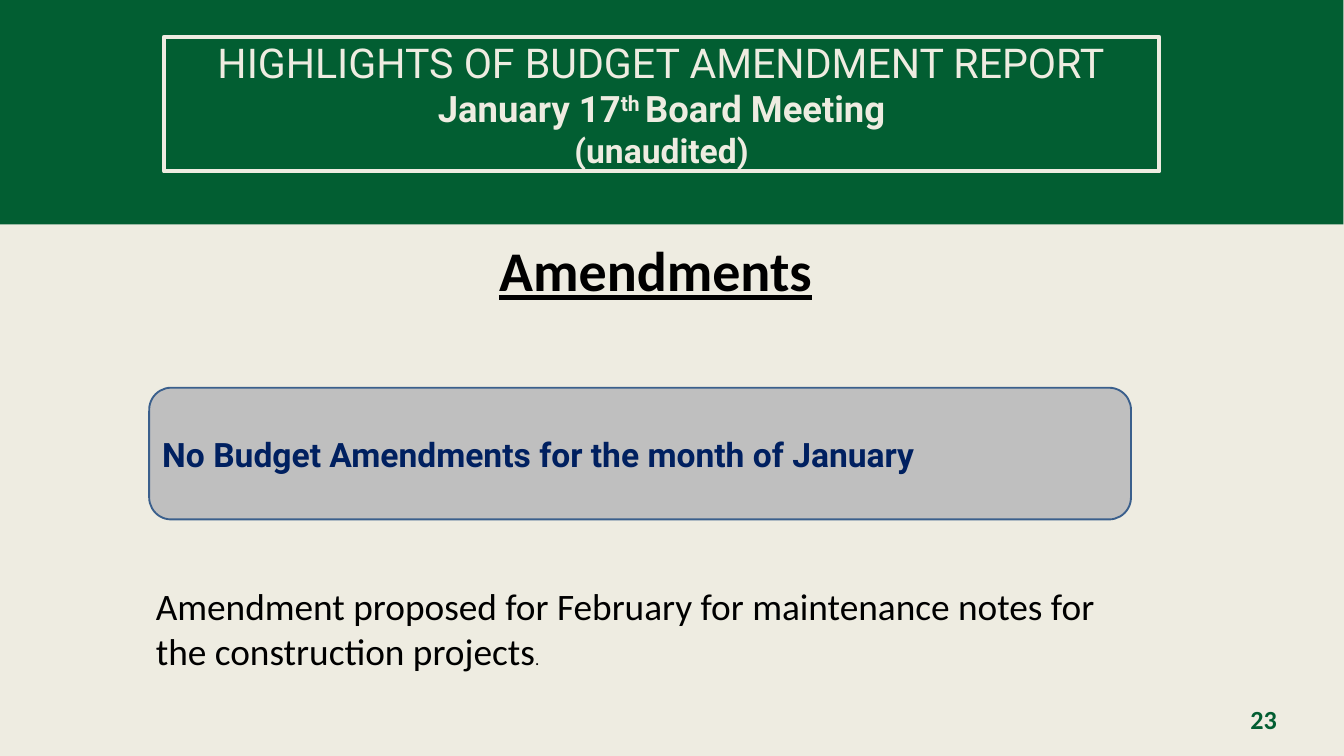
from copy import deepcopy
from dataclasses import dataclass

from pptx import Presentation
from pptx.dml.color import RGBColor
from pptx.enum.shapes import MSO_SHAPE
from pptx.enum.text import MSO_ANCHOR, MSO_AUTO_SIZE, PP_ALIGN
from pptx.util import Inches, Pt


@dataclass(frozen=True)
class Theme:
    """Colours, fonts and type sizes of the slide."""

    green: str = "025E32"
    cream: str = "EEECE1"
    grey: str = "BFBFBF"
    blue: str = "3A5F8C"
    navy: str = "002060"
    black: str = "000000"
    heading_font: str = "Roboto"
    body_font: str = "Calibri"
    title_size: int = 44
    meeting_size: int = 39
    notice_size: int = 36
    section_size: int = 60
    body_size: int = 40
    number_size: int = 28
    stop_size: int = 18


def write(paragraph, text, font, size, color, bold=False, underline=None,
          baseline=0, line_break=False):
    """Add a formatted run, followed by a line break if asked."""
    run = paragraph.add_run()
    run.text = text
    run.font.name = font
    run.font.size = Pt(size)
    run.font.bold = bold
    run.font.underline = underline
    run.font.color.rgb = RGBColor.from_string(color)
    properties = run._r.get_or_add_rPr()
    if baseline:
        properties.set("baseline", str(baseline * 1000))
    if line_break:
        paragraph.add_line_break()
        paragraph._p[-1].append(deepcopy(properties))


class SlideBuilder:
    """Adds styled elements to the current slide."""

    def __init__(self, slide, theme):
        """Keep the slide and theme and paint the background."""
        self.slide = slide
        self.theme = theme
        slide.background.fill.solid()
        slide.background.fill.fore_color.rgb = RGBColor.from_string(theme.cream)

    def outline(self, shape, color, width):
        """Draw a solid outline around a shape."""
        shape.line.color.rgb = RGBColor.from_string(color)
        shape.line.width = Pt(width)

    def panel(self, kind, left, top, width, height, fill):
        """Add a filled shape without outline or shadow."""
        shape = self.slide.shapes.add_shape(
            kind, Inches(left), Inches(top), Inches(width), Inches(height))
        shape.shadow.inherit = False
        shape.fill.solid()
        shape.fill.fore_color.rgb = RGBColor.from_string(fill)
        shape.line.fill.background()
        return shape

    def frame(self, shape, align, margins=True, wrap=True, anchor=MSO_ANCHOR.TOP,
              auto_size=MSO_AUTO_SIZE.NONE):
        """Format a text frame and return its first paragraph."""
        text_frame = shape.text_frame
        text_frame.word_wrap = wrap
        text_frame.auto_size = auto_size
        text_frame.vertical_anchor = anchor
        if not margins:
            text_frame.margin_left = text_frame.margin_right = 0
            text_frame.margin_top = text_frame.margin_bottom = 0
        paragraph = text_frame.paragraphs[0]
        paragraph.alignment = align
        return paragraph

    def text_box(self, left, top, width, height, align=PP_ALIGN.LEFT, **options):
        """Add a growing text box and return its first paragraph."""
        box = self.slide.shapes.add_textbox(
            Inches(left), Inches(top), Inches(width), Inches(height))
        return self.frame(box, align, auto_size=MSO_AUTO_SIZE.SHAPE_TO_FIT_TEXT,
                          **options)

    def header(self):
        """Add the green band and the framed title on it."""
        theme = self.theme
        title = self.slide.shapes.title
        band = self.panel(MSO_SHAPE.RECTANGLE, 0, 0, 19.99, 3.34, theme.green)
        title.element.addprevious(band.element)
        title.left, title.top = Inches(2.44), Inches(0.55)
        title.width, title.height = Inches(14.81), Inches(2)
        self.outline(title, theme.cream, 4.5)
        paragraph = self.frame(title, PP_ALIGN.CENTER, margins=False)
        style = {"font": theme.heading_font, "color": theme.cream}
        meeting = {**style, "size": theme.meeting_size, "bold": True}
        write(paragraph, "HIGHLIGHTS OF BUDGET AMENDMENT REPORT",
              size=theme.title_size, line_break=True, **style)
        write(paragraph, "January 17", **meeting)
        write(paragraph, "th ", baseline=30, **meeting)
        write(paragraph, "Board Meeting", line_break=True, **meeting)
        write(paragraph, "(unaudited)", size=theme.notice_size, bold=True, **style)

    def section_heading(self, text):
        """Add the underlined section heading."""
        theme = self.theme
        paragraph = self.text_box(7.33, 3.46, 4.9, 1.11, wrap=False)
        write(paragraph, text, theme.body_font, theme.section_size, theme.black,
              bold=True, underline=True)

    def notice(self, text):
        """Add the rounded notice panel."""
        theme = self.theme
        panel = self.panel(MSO_SHAPE.ROUNDED_RECTANGLE, 2.22, 5.77, 14.61, 1.96,
                           theme.grey)
        self.outline(panel, theme.blue, 2)
        paragraph = self.frame(panel, PP_ALIGN.LEFT, anchor=MSO_ANCHOR.MIDDLE)
        write(paragraph, text, theme.heading_font, theme.notice_size, theme.navy,
              bold=True)

    def body(self, text):
        """Add the body sentence with its small full stop."""
        theme = self.theme
        paragraph = self.text_box(2.22, 8.63, 14.61, 1.45)
        write(paragraph, text, theme.body_font, theme.body_size, theme.black)
        write(paragraph, ".", theme.body_font, theme.stop_size, theme.black)

    def page_number(self, text):
        """Add the page number at the bottom right."""
        theme = self.theme
        paragraph = self.text_box(18.58, 10.46, 0.42, 0.47, PP_ALIGN.RIGHT,
                                  margins=False)
        write(paragraph, text, theme.body_font, theme.number_size, theme.green,
              bold=True)


def main():
    """Build and save the presentation."""
    presentation = Presentation()
    presentation.slide_width = Inches(20)
    presentation.slide_height = Inches(11.25)
    slide = presentation.slides.add_slide(
        presentation.slide_layouts.get_by_name("Title Only"))
    builder = SlideBuilder(slide, Theme())
    builder.header()
    builder.section_heading("Amendments")
    builder.page_number("23")
    builder.notice("No Budget Amendments for the month of January")
    builder.body("Amendment proposed for February for maintenance notes for "
                 "the construction projects")
    presentation.save("out.pptx")


if __name__ == "__main__":
    main()
